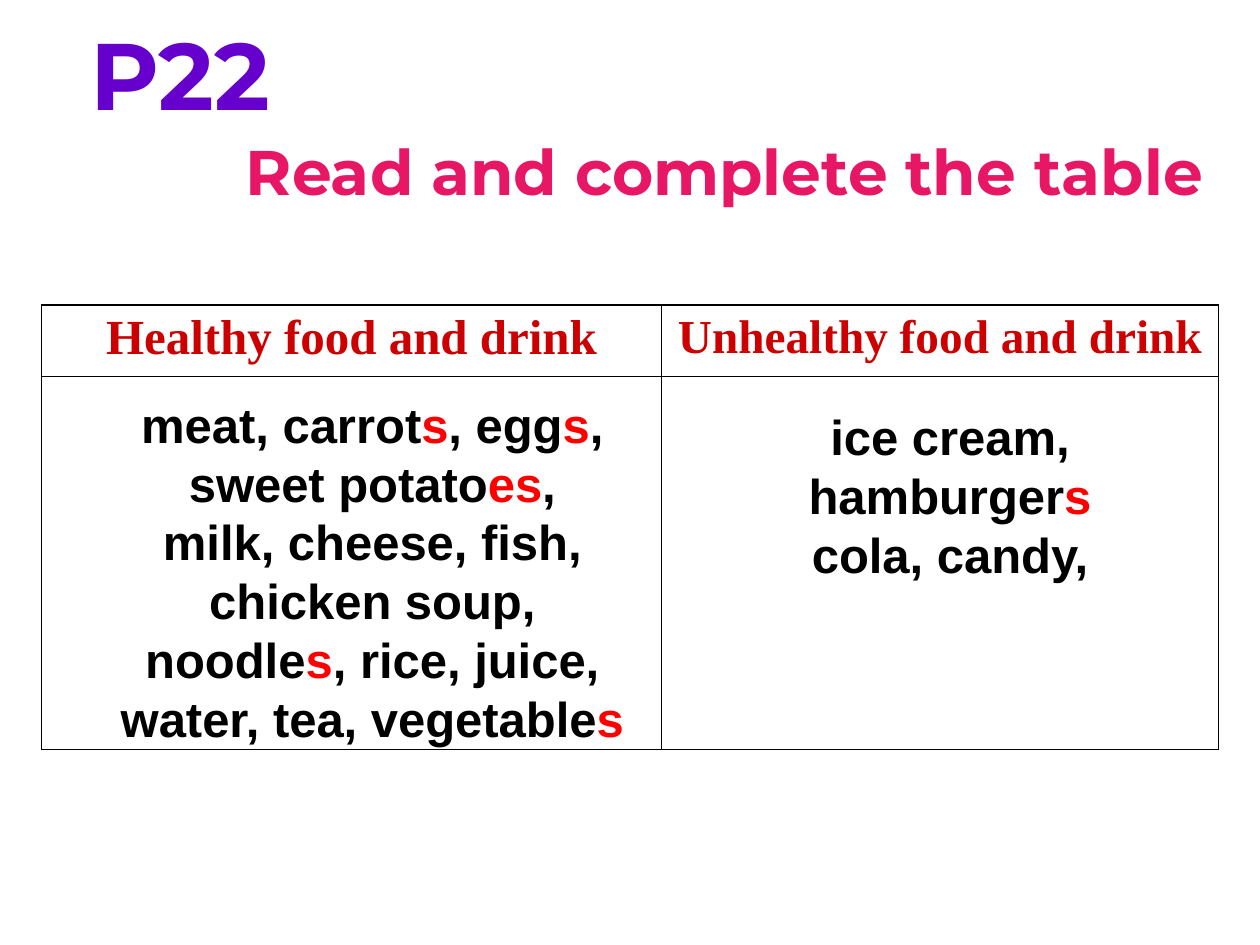
from lxml.etree import SubElement
from pptx import Presentation
from pptx.dml.color import RGBColor
from pptx.enum.shapes import MSO_SHAPE
from pptx.enum.text import MSO_ANCHOR, PP_ALIGN
from pptx.oxml.ns import qn
from pptx.util import Inches, Pt

BLACK = RGBColor(0x00, 0x00, 0x00)
WHITE = RGBColor(0xFF, 0xFF, 0xFF)
ENDING_RED = RGBColor(0xFF, 0x00, 0x00)
HEADER_RED = RGBColor(0xCC, 0x00, 0x00)
PURPLE = RGBColor(0x66, 0x00, 0xCC)
PINK = RGBColor(0xE8, 0x17, 0x66)

HEADERS = [("Healthy food and drink", 28), ("Unhealthy food and drink", 27)]

# Text between bars is a highlighted plural ending
HEALTHY = [
    "meat, carrot|s|, egg|s|,",
    "sweet potato|es|,",
    "milk, cheese, fish,",
    "chicken soup,",
    "noodle|s|, rice, juice,",
    "water, tea, vegetable|s|",
]
UNHEALTHY = ["ice cream, hamburger|s|", "cola, candy,"]


def style_paragraph(paragraph, font_name, size, color=None):
    paragraph.alignment = PP_ALIGN.CENTER
    font = paragraph.font
    font.name, font.size, font.bold = font_name, Pt(size), True
    if color is not None:
        font.color.rgb = color


def add_title(slide, text, box, size, color):
    frame = slide.shapes.add_textbox(*map(Inches, box)).text_frame
    frame.word_wrap = False
    frame.margin_left = frame.margin_right = 0
    paragraph = frame.paragraphs[0]
    paragraph.text = text
    style_paragraph(paragraph, "Montserrat", size, color)


def write_answers(frame, lines):
    frame.word_wrap = True
    for index, line in enumerate(lines):
        paragraph = frame.add_paragraph() if index else frame.paragraphs[0]
        style_paragraph(paragraph, "Arial", 28)
        for part, text in enumerate(line.split("|")):
            if text:
                run = paragraph.add_run()
                run.text = text
                run.font.color.rgb = ENDING_RED if part % 2 else BLACK


def add_borders(cell):
    properties = cell._tc.get_or_add_tcPr()
    for position, side in enumerate(("a:lnL", "a:lnR", "a:lnT", "a:lnB")):
        line = properties.makeelement(qn(side), {"w": str(Pt(1))})
        fill = SubElement(line, qn("a:solidFill"))
        SubElement(fill, qn("a:srgbClr"), {"val": str(BLACK)})
        properties.insert(position, line)


def add_food_table(slide):
    box = map(Inches, (0.33, 2.42, 9.34, 3.53))
    table = slide.shapes.add_table(2, 2, *box).table
    table.first_row = table.horz_banding = False
    for column, width in zip(table.columns, (4.92, 4.42)):
        column.width = Inches(width)
    for row, height in zip(table.rows, (0.57, 2.96)):
        row.height = Inches(height)
    for cell in table.iter_cells():
        cell.fill.background()
        add_borders(cell)
    for column, (header, size) in enumerate(HEADERS):
        paragraph = table.cell(0, column).text_frame.paragraphs[0]
        paragraph.text = header
        style_paragraph(paragraph, "Times New Roman", size, HEADER_RED)


def add_filled_answers(slide, lines, box):
    answers = slide.shapes.add_shape(MSO_SHAPE.RECTANGLE, *map(Inches, box))
    answers.shadow.inherit = False
    answers.fill.solid()
    answers.fill.fore_color.rgb = WHITE
    answers.line.fill.background()
    answers.text_frame.vertical_anchor = MSO_ANCHOR.MIDDLE
    write_answers(answers.text_frame, lines)


def add_plain_answers(slide, lines, box):
    answers = slide.shapes.add_textbox(*map(Inches, box))
    write_answers(answers.text_frame, lines)


def main():
    presentation = Presentation()
    presentation.slide_width = Inches(10)
    presentation.slide_height = Inches(7.5)
    slide = presentation.slides.add_slide(presentation.slide_layouts[6])

    # Table with its two headings
    add_food_table(slide)

    # Page number and task
    add_title(slide, "P22", (0.68, 0.08, 1.5, 1.17), 54, PURPLE)
    add_title(slide, "Read and complete the table", (1.85, 1, 7.8, 0.75), 36, PINK)

    # Answers laid over the table
    add_filled_answers(slide, UNHEALTHY, (5.58, 3.17, 3.92, 1.51))
    add_plain_answers(slide, HEALTHY, (0.58, 3.08, 4.75, 3.4))

    presentation.save("out.pptx")


if __name__ == "__main__":
    main()
